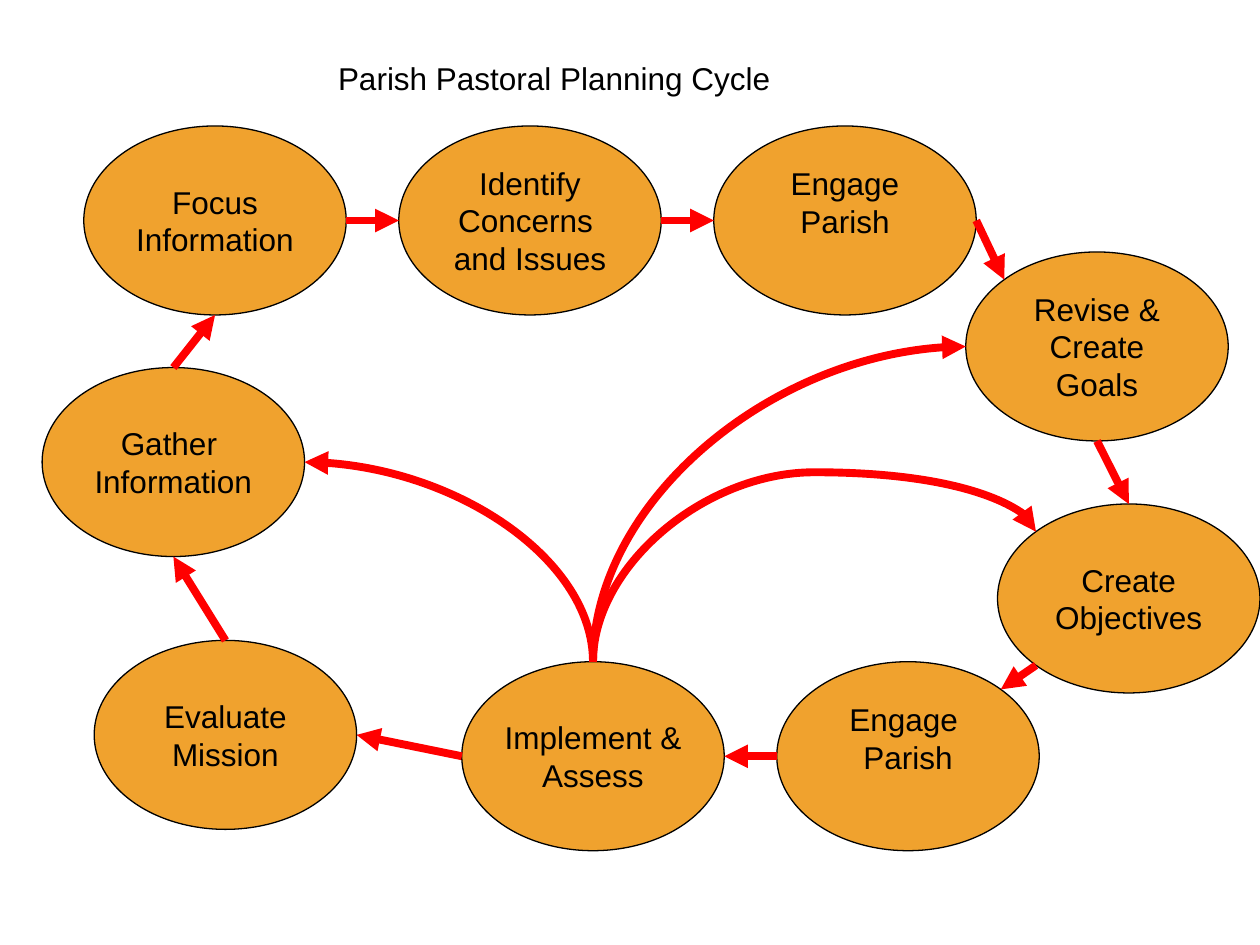
from dataclasses import dataclass
from math import sqrt

from lxml import etree
from pptx import Presentation
from pptx import util as u
from pptx.dml.color import RGBColor
from pptx.enum import shapes, text
from pptx.oxml.ns import qn


@dataclass(frozen=True)
class Theme:
    font: str = "Arial"
    size: float = 18
    ink: RGBColor = RGBColor(0x00, 0x00, 0x00)
    fill: RGBColor = RGBColor(0xF0, 0xA2, 0x2E)
    arrow: RGBColor = RGBColor(0xFF, 0x00, 0x00)
    outline_width: float = 0.75
    arrow_width: float = 4.5


STEP_W, STEP_H = 5.29, 3.81
LIFT = 0.73
DIAGONAL = sqrt(0.5)
SITES = {
    "top": (0, -1), "bottom": (0, 1), "left": (-1, 0), "right": (1, 0),
    "top left": (-DIAGONAL, -DIAGONAL),
    "bottom left": (-DIAGONAL, DIAGONAL),
    "top right": (DIAGONAL, -DIAGONAL),
}

STEPS = {
    "gather": ("Gather \nInformation", 0.85, 7.41, 0),
    "focus": ("Focus\nInformation", 1.69, 2.54, 0),
    "identify": ("Identify\nConcerns \nand Issues", 8.04, 2.54, 0),
    "engage early": ("Engage\nParish", 14.39, 2.54, LIFT),
    "goals": ("Revise &\nCreate\nGoals", 19.47, 5.08, 0),
    "objectives": ("Create\nObjectives", 20.11, 10.16, 0),
    "engage late": ("Engage \nParish", 15.66, 13.34, LIFT),
    "implement": ("Implement &\nAssess", 9.31, 13.34, 0),
    "evaluate": ("Evaluate\nMission", 1.9, 12.91, 0),
}

ARROWS = [
    ("gather", "top", "focus", "bottom"),
    ("focus", "right", "identify", "left"),
    ("identify", "right", "engage early", "left"),
    ("engage early", "right", "goals", "top left"),
    ("goals", "bottom", "objectives", "top"),
    ("objectives", "bottom left", "engage late", "top right"),
    ("engage late", "left", "implement", "right"),
    ("implement", "left", "evaluate", "right"),
    ("evaluate", "top", "gather", "bottom"),
]

FEEDBACK = [
    ("goals", "left", None),
    ("objectives", "top left", 145700),
    ("gather", "right", None),
]


def site(step, side):
    _, left, top, _ = STEPS[step]
    dx, dy = SITES[side]
    return left + STEP_W / 2 * (1 + dx), top + STEP_H / 2 * (1 + dy)


class CycleSlide:
    def __init__(self, prs, theme):
        self.theme = theme
        self.slide = prs.slides.add_slide(prs.slide_layouts[5])

    def style_text(self, tf, align):
        for p in tf.paragraphs:
            p.alignment = align
            p.font.name = self.theme.font
            p.font.size = u.Pt(self.theme.size)
            p.font.color.rgb = self.theme.ink

    def title(self, words, left, top, width, height):
        sp = self.slide.shapes.title
        sp.left, sp.top = u.Cm(left), u.Cm(top)
        sp.width, sp.height = u.Cm(width), u.Cm(height)
        tf = sp.text_frame
        tf.text = words
        tf.word_wrap = True
        tf.auto_size = text.MSO_AUTO_SIZE.NONE
        tf.vertical_anchor = text.MSO_ANCHOR.TOP
        self.style_text(tf, text.PP_ALIGN.LEFT)

    def step(self, words, left, top, lift):
        sp = self.slide.shapes.add_shape(
            shapes.MSO_SHAPE.OVAL, u.Cm(left), u.Cm(top), u.Cm(STEP_W), u.Cm(STEP_H))
        sp.shadow.inherit = False
        sp.fill.solid()
        sp.fill.fore_color.rgb = self.theme.fill
        sp.line.color.rgb = self.theme.ink
        sp.line.width = u.Pt(self.theme.outline_width)
        tf = sp.text_frame
        tf.text = words
        tf.word_wrap = False
        tf.vertical_anchor = text.MSO_ANCHOR.MIDDLE
        tf.margin_bottom = u.Cm(0.13 + lift)
        self.style_text(tf, text.PP_ALIGN.CENTER)

    def arrow(self, start, end, kind=shapes.MSO_CONNECTOR.STRAIGHT):
        sp = self.slide.shapes.add_connector(kind, *(u.Cm(v) for v in (*start, *end)))
        sp.line.color.rgb = self.theme.arrow
        sp.line.width = u.Pt(self.theme.arrow_width)
        etree.SubElement(sp.line._get_or_add_ln(), qn("a:tailEnd"), type="triangle")
        etree.SubElement(sp._element.spPr, qn("a:effectLst"))
        return sp

    def rising_curve(self, start, end, bend):
        (x1, y1), (x2, y2) = start, end
        width, height = abs(y2 - y1), abs(x2 - x1)
        left, top = (x1 + x2 - width) / 2, (y1 + y2 - height) / 2
        box = (left, top), (left + width, top + height)
        spPr = self.arrow(*box, shapes.MSO_CONNECTOR.CURVE)._element.spPr
        xfrm, geom = spPr.find(qn("a:xfrm")), spPr.find(qn("a:prstGeom"))
        if x2 > x1:
            xfrm.set("rot", str(270 * 60000))
        else:
            xfrm.set("rot", str(90 * 60000))
            xfrm.set("flipH", "1")
        if bend is None:
            geom.set("prst", "curvedConnector2")
        else:
            guide = etree.SubElement(geom.find(qn("a:avLst")), qn("a:gd"))
            guide.set("name", "adj1")
            guide.set("fmla", f"val {bend}")


def main():
    prs = Presentation()
    prs.slide_width, prs.slide_height = u.Cm(25.4), u.Cm(19.05)
    s = CycleSlide(prs, Theme())
    s.title("Parish Pastoral Planning Cycle", 6.56, 1.06, 13.12, 1.27)
    for step in STEPS.values():
        s.step(*step)
    for source, exit_side, target, entry_side in ARROWS:
        s.arrow(site(source, exit_side), site(target, entry_side))
    for target, entry_side, bend in FEEDBACK:
        s.rising_curve(site("implement", "top"), site(target, entry_side), bend)
    prs.save("out.pptx")


if __name__ == "__main__":
    main()
